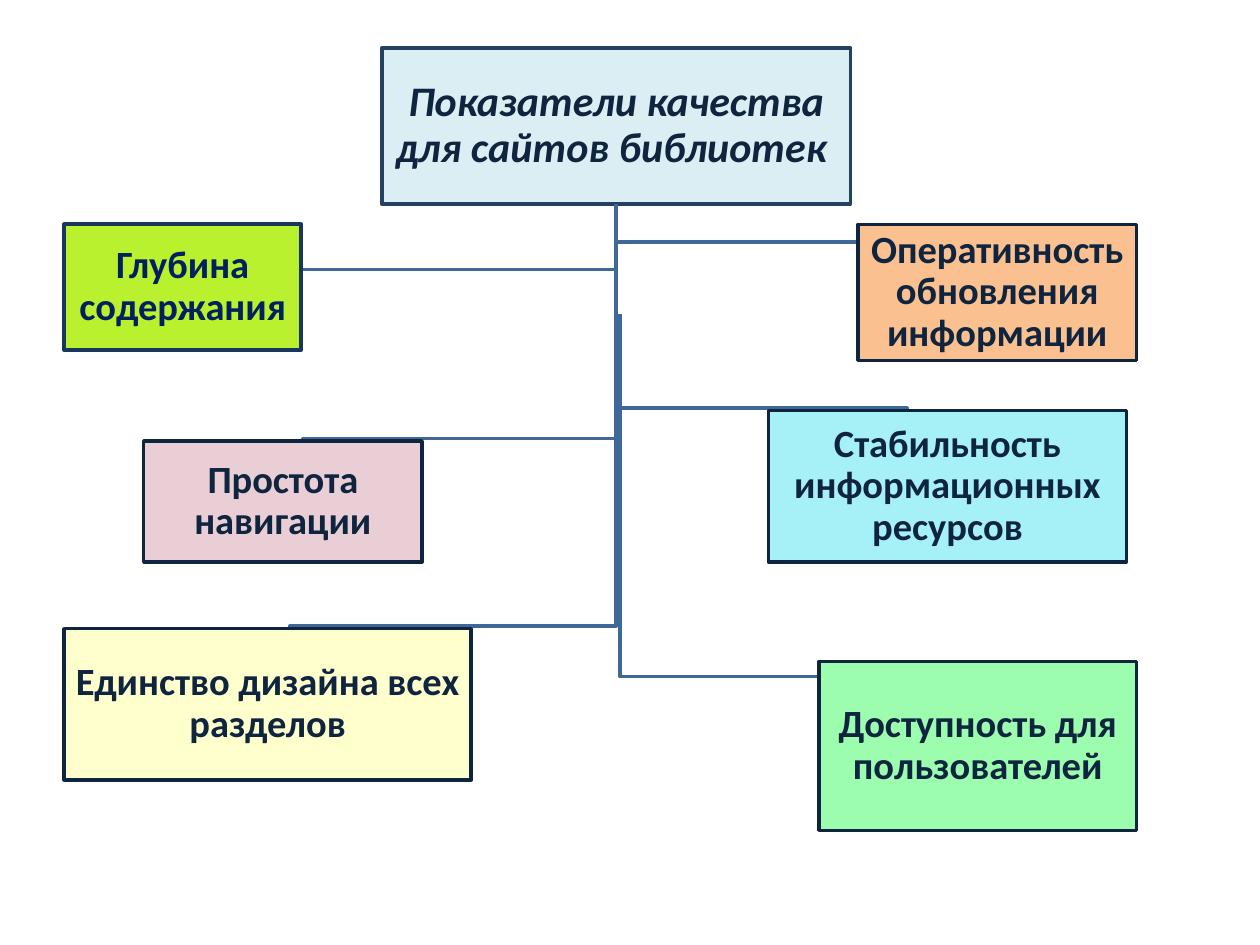
from lxml.etree import SubElement
from pptx import Presentation
from pptx.dml.color import RGBColor
from pptx.enum.shapes import MSO_SHAPE
from pptx.enum.text import MSO_ANCHOR, MSO_AUTO_SIZE, PP_ALIGN
from pptx.oxml.ns import qn
from pptx.util import Pt

SCALE = 9144
NAVY = "0F243E"


def emu(px):
    return px * SCALE


def color(value):
    return RGBColor.from_string(value)


class Chart:
    font = "Calibri"
    link_color = "3F6797"
    line_width = Pt(2)
    stub = 2

    def __init__(self, slide):
        self.slide = slide

    def link(self, start, end):
        (x, y), (end_x, end_y) = start, end
        bend_y = end_y - self.stub
        builder = self.slide.shapes.build_freeform(x, y, scale=SCALE)
        builder.add_line_segments([(x, bend_y), (end_x, bend_y), (end_x, end_y)], close=False)
        bent_line = builder.convert_to_shape()
        bent_line.shadow.inherit = False
        bent_line.fill.background()
        self.outline(bent_line, self.link_color)

    def outline(self, shape, line):
        shape.line.color.rgb = color(line)
        shape.line.width = self.line_width

    def decorate(self, shape, fill, line, opacity=100):
        shape.fill.solid()
        shape.fill.fore_color.rgb = color(fill)
        if opacity < 100:
            fill_color = shape.element.spPr.find(qn("a:solidFill"))[0]
            SubElement(fill_color, qn("a:alpha"), val=str(opacity * 1000))
        self.outline(shape, line)

    def add_text(self, shape, text, size, ink, italic=False):
        frame = shape.text_frame
        frame.word_wrap = True
        frame.auto_size = MSO_AUTO_SIZE.NONE
        frame.vertical_anchor = MSO_ANCHOR.MIDDLE
        frame.margin_left = frame.margin_right = emu(1)
        frame.margin_top = frame.margin_bottom = emu(1)
        para = frame.paragraphs[0]
        para.alignment = PP_ALIGN.CENTER
        para.line_spacing = 0.9
        span = para.add_run()
        span.text = text
        span.font.name = self.font
        span.font.size = Pt(size)
        span.font.bold = True
        span.font.italic = italic
        span.font.color.rgb = color(ink)

    def title(self, text, left, top, width, height):
        box = self.slide.shapes.title
        box.left, box.top = emu(left), emu(top)
        box.width, box.height = emu(width), emu(height)
        self.decorate(box, "DBEEF4", "254061")
        self.add_text(box, text, 24, NAVY, italic=True)

    def box(self, text, left, top, width, height, fill, line=NAVY, ink=NAVY, opacity=100):
        box = self.slide.shapes.add_shape(
            MSO_SHAPE.RECTANGLE, emu(left), emu(top), emu(width), emu(height))
        box.shadow.inherit = False
        self.decorate(box, fill, line, opacity)
        self.add_text(box, text, 22, ink)


def main():
    deck = Presentation()
    deck.slide_width, deck.slide_height = emu(1000), emu(750)
    page = deck.slides.add_slide(deck.slide_layouts[5])
    chart = Chart(page)

    chart.title("Показатели качества для сайтов библиотек ", 303, 38, 372, 124)

    root = (489, 162)
    for end in [(768, 194), (720, 326), (240, 350), (230, 499), (161, 216)]:
        chart.link(root, end)
    chart.link((492, 249), (731, 539))

    chart.box("Глубина содержания", 51, 178, 188, 100, "BAF12F", line="17375E", ink="002060")
    chart.box("Доступность для пользователей", 650, 525, 252, 134, "9DFDAF")
    chart.box("Единство дизайна всех разделов", 51, 499, 323, 120, "FFFF9B", opacity=49)
    chart.box("Простота навигации", 114, 350, 221, 96, "E9CFD5")
    chart.box("Стабильность информационных ресурсов", 610, 326, 284, 120, "A6F0F8")
    chart.box("Оперативность обновления информации", 681, 178, 221, 108, "FAC090")

    deck.save("out.pptx")


if __name__ == "__main__":
    main()
